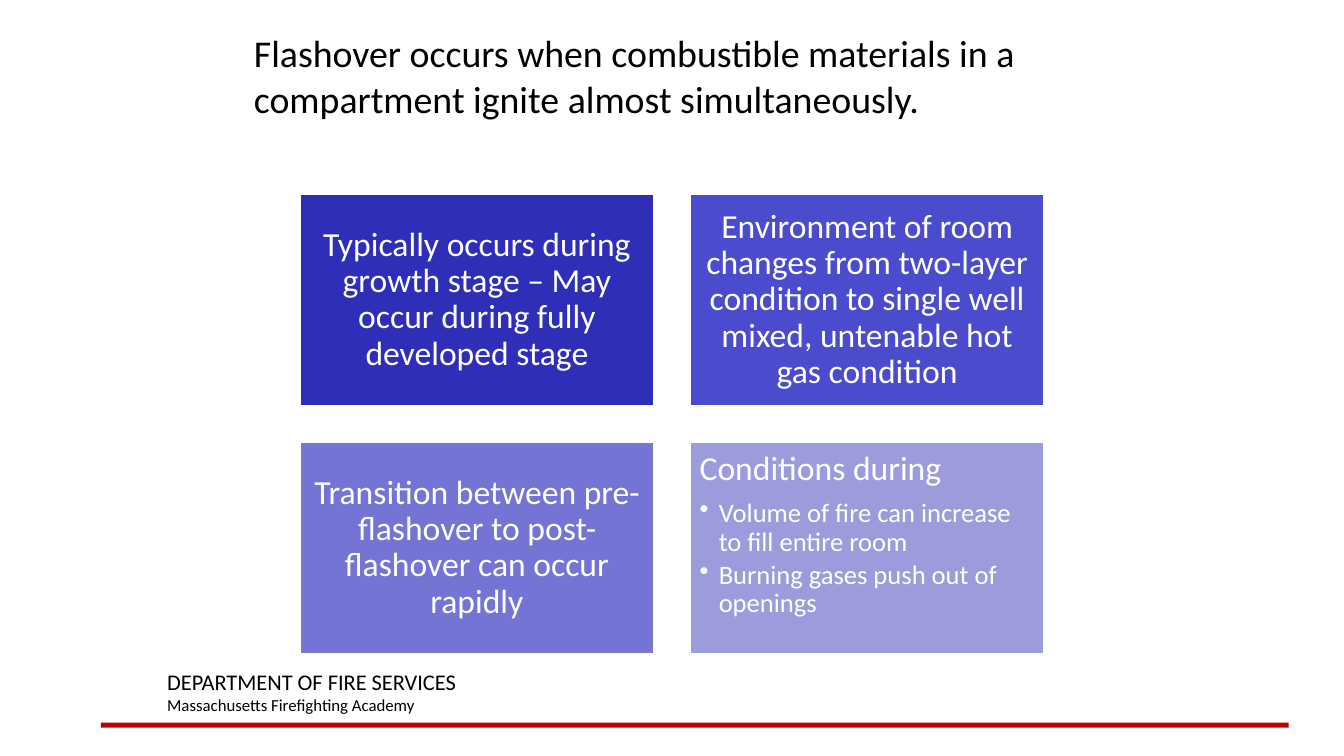
from dataclasses import dataclass

from lxml import etree
from pptx import Presentation
from pptx.dml.color import RGBColor
from pptx.enum.shapes import MSO_SHAPE
from pptx.enum.text import MSO_ANCHOR, PP_ALIGN
from pptx.oxml.ns import qn
from pptx.util import Inches, Pt

RECTANGLE = MSO_SHAPE.RECTANGLE
TOP, MIDDLE = MSO_ANCHOR.TOP, MSO_ANCHOR.MIDDLE
LEFT, CENTER = PP_ALIGN.LEFT, PP_ALIGN.CENTER


@dataclass(frozen=True)
class Theme:
    font: str = "Calibri"
    ink: str = "000000"
    paper: str = "FFFFFF"
    rule: str = "C00000"
    title_size: float = 27
    card_size: float = 24
    bullet_size: float = 19
    department_size: float = 16
    academy_size: float = 12


@dataclass(frozen=True)
class Card:
    text: str
    fill: str
    bullets: tuple[str, ...] = ()


THEME = Theme()
CARDS = (
    Card("Typically occurs during growth stage – May occur during fully developed stage", "2E2EB9"),
    Card("Environment of room changes from two-layer condition to single well mixed, "
         "untenable hot gas condition", "4B4BCD"),
    Card("Transition between pre-flashover to post-flashover can occur rapidly", "7474D4"),
    Card("Conditions during", "9C9CDD",
         ("Volume of fire can increase to fill entire room", "Burning gases push out of openings")),
)
GRID_COLUMNS = 2
GRID_LEFT, GRID_TOP = 2.97, 1.92
CARD_WIDTH, CARD_HEIGHT = 3.52, 2.11
GRID_GAP = 0.35
BULLET_INDENT = 0.19


def set_font(paragraph, size: float, color: str) -> None:
    paragraph.font.name = THEME.font
    paragraph.font.size = Pt(size)
    paragraph.font.color.rgb = RGBColor.from_string(color)


def add_bullet(paragraph) -> None:
    properties = paragraph._p.get_or_add_pPr()
    properties.set("marL", str(Inches(BULLET_INDENT)))
    properties.set("indent", str(-Inches(BULLET_INDENT)))
    etree.SubElement(properties, qn("a:buChar")).set("char", "•")


def add_text(slide, left: float, top: float, width: float, height: float,
             lines: tuple[tuple[str, float], ...], anchor: MSO_ANCHOR = TOP) -> None:
    """Add a text box with one paragraph for each (text, size) pair."""
    box = slide.shapes.add_textbox(Inches(left), Inches(top), Inches(width), Inches(height))
    frame = box.text_frame
    frame.word_wrap = True
    frame.vertical_anchor = anchor
    for index, (text, size) in enumerate(lines):
        paragraph = frame.add_paragraph() if index else frame.paragraphs[0]
        paragraph.text = text
        set_font(paragraph, size, THEME.ink)


def add_rectangle(slide, left: float, top: float, width: float, height: float, fill: str):
    shape = slide.shapes.add_shape(
        RECTANGLE, Inches(left), Inches(top), Inches(width), Inches(height))
    shape.shadow.inherit = False
    shape.fill.solid()
    shape.fill.fore_color.rgb = RGBColor.from_string(fill)
    shape.line.fill.background()
    return shape


def add_card(slide, card: Card, left: float, top: float) -> None:
    shape = add_rectangle(slide, left, top, CARD_WIDTH, CARD_HEIGHT, card.fill)
    shape.line.color.rgb = RGBColor.from_string(THEME.paper)
    shape.line.width = Pt(2)

    frame = shape.text_frame
    frame.word_wrap = True
    frame.margin_left = frame.margin_right = Inches(0.1)
    frame.margin_top = frame.margin_bottom = Inches(0.1)
    frame.vertical_anchor = TOP if card.bullets else MIDDLE

    heading = frame.paragraphs[0]
    heading.text = card.text
    heading.alignment = LEFT if card.bullets else CENTER
    heading.line_spacing = 0.9
    if card.bullets:
        heading.space_after = Pt(0.35 * THEME.card_size)
    set_font(heading, THEME.card_size, THEME.paper)

    for text in card.bullets:
        paragraph = frame.add_paragraph()
        paragraph.text = text
        paragraph.level = 1
        add_bullet(paragraph)
        paragraph.alignment = LEFT
        paragraph.line_spacing = 0.9
        paragraph.space_after = Pt(0.15 * THEME.bullet_size)
        set_font(paragraph, THEME.bullet_size, THEME.paper)


def main() -> None:
    presentation = Presentation()
    presentation.slide_width = Inches(13.33)
    presentation.slide_height = Inches(7.5)
    slide = presentation.slides.add_slide(presentation.slide_layouts[6])

    add_rectangle(slide, 1, 7.17, 11.78, 0.05, THEME.rule)
    add_text(slide, 1.56, 6.58, 5.67, 0.57, (
        ("DEPARTMENT OF FIRE SERVICES", THEME.department_size),
        ("Massachusetts Firefighting Academy", THEME.academy_size),
    ))
    for index, card in enumerate(CARDS):
        row, column = divmod(index, GRID_COLUMNS)
        add_card(slide, card,
                 GRID_LEFT + column * (CARD_WIDTH + GRID_GAP),
                 GRID_TOP + row * (CARD_HEIGHT + GRID_GAP))
    add_text(slide, 2.42, 0.25, 8.17, 1, (
        ("Flashover occurs when combustible materials in a compartment ignite "
         "almost simultaneously.", THEME.title_size),
    ), MIDDLE)

    presentation.save("out.pptx")


if __name__ == "__main__":
    main()
